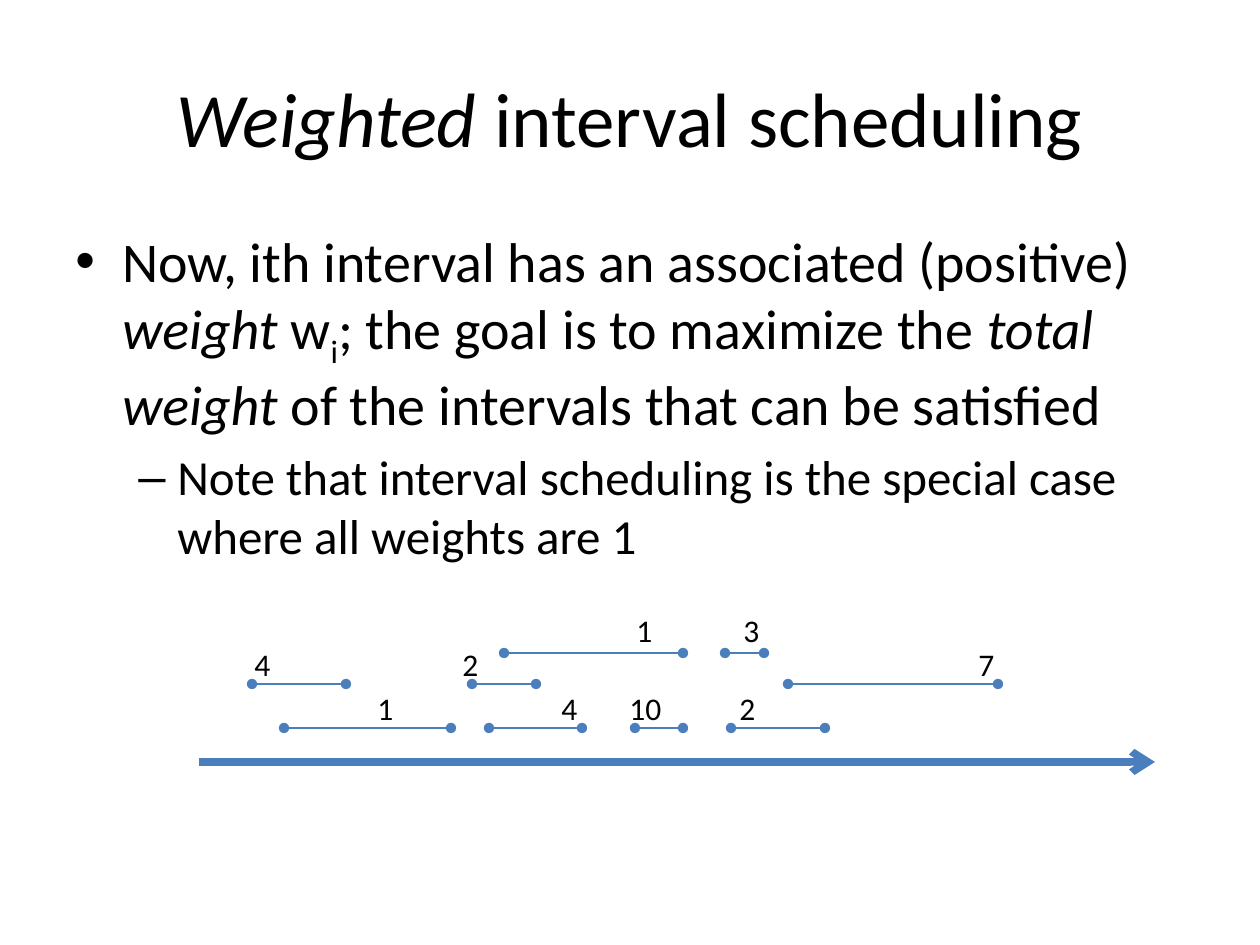
from lxml import etree
from pptx import Presentation
from pptx import util as u
from pptx.dml.color import RGBColor
from pptx.enum import shapes, text
from pptx.oxml.ns import qn

EMU_PER_PX = 914400 / 126
BLACK = RGBColor(0x00, 0x00, 0x00)
BLUE = RGBColor(0x4B, 0x7E, 0xBC)
FONT = "Calibri"

# Rows of the diagram: line height and label top
ROWS = {"top": (653, 605), "middle": (684, 639), "bottom": (728, 683)}
# Row, start, end, weight, label left, label width
INTERVALS = [
    ("middle", 252, 346, "4", 242, 42),
    ("bottom", 284, 451, "1", 365, 42),
    ("middle", 472, 536, "2", 450, 42),
    ("top", 504, 683, "1", 624, 42),
    ("bottom", 489, 582, "4", 549, 42),
    ("bottom", 635, 683, "10", 617, 58),
    ("middle", 788, 998, "7", 966, 42),
    ("bottom", 731, 825, "2", 727, 42),
    ("top", 725, 764, "3", 731, 42),
]


def px(n):
    return u.Emu(round(n * EMU_PER_PX))


def add_run(p, words, size, italic=False, baseline=None):
    r = p.add_run()
    r.text = words
    r.font.name = FONT
    r.font.size = u.Pt(size)
    r.font.color.rgb = BLACK
    r.font.italic = italic
    if baseline:
        r.font._element.set("baseline", str(baseline))


def set_bullet(p, char, level, left, hanging):
    p.level = level
    pPr = p._p.get_or_add_pPr()
    pPr.set("marL", str(px(left)))
    pPr.set("indent", str(-px(hanging)))
    font = etree.SubElement(pPr, qn("a:buFont"))
    font.set("typeface", "Arial")
    etree.SubElement(pPr, qn("a:buChar")).set("char", char)


def add_line(s, x1, x2, y, width, head, tail):
    line = s.shapes.add_connector(
        shapes.MSO_CONNECTOR.STRAIGHT, px(x1), px(y), px(x2), px(y))
    line.line.color.rgb = BLUE
    line.line.width = u.Pt(width)
    ln = line.line._get_or_add_ln()
    for end, kind in (("a:headEnd", head), ("a:tailEnd", tail)):
        etree.SubElement(ln, qn(end)).set("type", kind)
    etree.SubElement(line._element.spPr, qn("a:effectLst"))


def add_label(s, words, x, y, width):
    sp = s.shapes.add_textbox(px(x), px(y), px(width), px(51))
    tf = sp.text_frame
    tf.word_wrap = False
    tf.auto_size = text.MSO_AUTO_SIZE.SHAPE_TO_FIT_TEXT
    add_run(tf.paragraphs[0], words, 18)


def add_title(s):
    sp = s.shapes.title
    sp.left, sp.top, sp.width, sp.height = px(63), px(38), px(1134), px(158)
    tf = sp.text_frame
    tf.vertical_anchor = text.MSO_ANCHOR.MIDDLE
    p = tf.paragraphs[0]
    p.alignment = text.PP_ALIGN.CENTER
    add_run(p, "Weighted", 44, italic=True)
    add_run(p, " interval scheduling", 44)


def add_body(s):
    sp = s.shapes.add_textbox(px(63), px(220), px(1134), px(624))
    tf = sp.text_frame
    tf.word_wrap = True
    p = tf.paragraphs[0]
    p.space_before = u.Pt(6.4)
    set_bullet(p, "•", 0, 47, 47)
    for words, italic, baseline in (
        ("Now, ith interval has an associated (positive) ", False, None),
        ("weight ", True, None),
        ("w", False, None),
        ("i", False, -25000),
        ("; the goal is to maximize the ", False, None),
        ("total weight", True, None),
        (" of the intervals that can be satisfied", False, None),
    ):
        add_run(p, words, 32, italic, baseline)
    p = tf.add_paragraph()
    p.space_before = u.Pt(5.6)
    set_bullet(p, "–", 1, 102, 39)
    add_run(p, "Note that interval scheduling is the special case "
               "where all weights are 1", 28)


def main():
    prs = Presentation()
    prs.slide_width, prs.slide_height = px(1260), px(945)
    s = prs.slides.add_slide(prs.slide_layouts[5])
    add_title(s)
    add_body(s)

    # Time axis, then the weighted intervals
    add_line(s, 199, 1155, 762, 4.25, "none", "arrow")
    for row, start, end, weight, label_x, label_width in INTERVALS:
        line_y, label_y = ROWS[row]
        add_line(s, start, end, line_y, 1.5, "oval", "oval")
        add_label(s, weight, label_x, label_y, label_width)

    prs.save("out.pptx")


if __name__ == "__main__":
    main()
